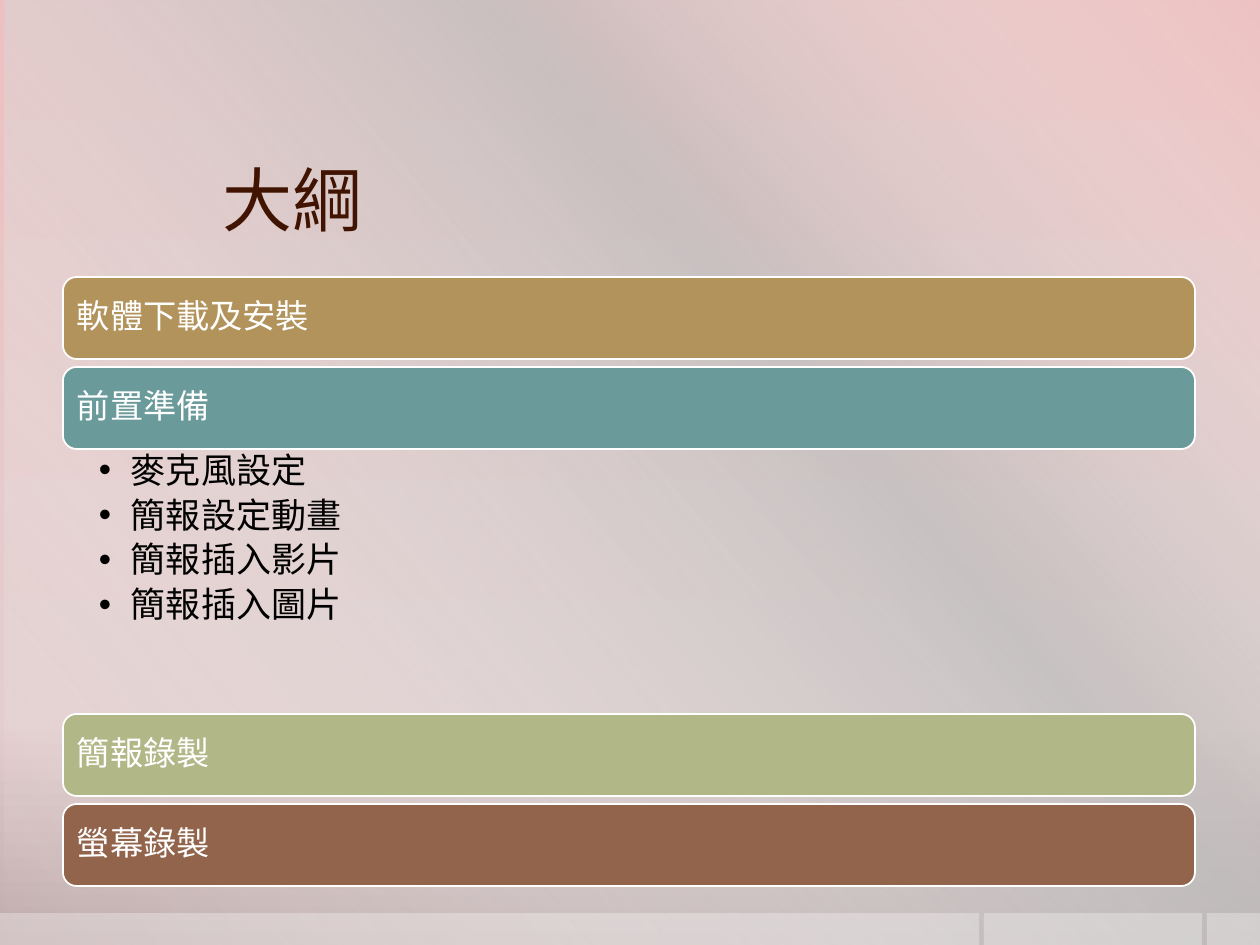
from dataclasses import dataclass
from typing import Any, NamedTuple

from pptx import Presentation
from pptx.dml.color import RGBColor
from pptx.enum.shapes import MSO_SHAPE
from pptx.enum.text import MSO_ANCHOR, PP_ALIGN
from pptx.oxml.ns import qn
from pptx.util import Emu, Pt
from lxml.etree import SubElement


class Stop(NamedTuple):
    percent: int
    color: str
    opacity: int = 100


class Topic(NamedTuple):
    label: str
    color: str
    details: tuple[str, ...] = ()


@dataclass(frozen=True)
class Theme:
    font: str = "Noto Sans CJK SC"
    title_color: str = "411401"
    light: str = "FFFFFF"
    dark: str = "000000"
    title_size: int = 40
    topic_size: int = 19
    detail_size: int = 20
    detail_gap: int = 4
    backdrop: tuple[Stop, ...] = (
        Stop(0, "EDC1C1"), Stop(76, "E3CDCD"), Stop(100, "BFABAB"))
    sheen: tuple[Stop, ...] = (
        Stop(0, "FFFFFF", 0), Stop(34, "BFBFBF", 61),
        Stop(38, "BFBFBF", 76), Stop(100, "FFFFFF", 0))


THEME = Theme()
SLIDE_WIDTH, SLIDE_HEIGHT = 1260, 945
BAR_LEFT, BAR_WIDTH, BAR_HEIGHT, BAR_GAP = 63, 1132, 82, 8
TOPICS_TOP, DETAILS_HEIGHT = 277, 265
STRIP_TOP, STRIP_GAP, STRIP_OPACITY = 913, 5, 30
STRIP_WIDTHS = (979, 218, 53)
BULLET_INDENT = 32

TOPICS = (
    Topic("軟體下載及安裝", "B2935C"),
    Topic("前置準備", "6A9A9A",
          ("麥克風設定", "簡報設定動畫", "簡報插入影片", "簡報插入圖片")),
    Topic("簡報錄製", "B2B787"),
    Topic("螢幕錄製", "91644B"),
)


def px(length: int) -> Emu:
    return Emu(round(length * 914400 / 126))


def apply(target: Any, values: dict[str, Any]) -> None:
    for attribute, value in values.items():
        setattr(target, attribute, value)


def set_opacity(color: Any, percent: int) -> None:
    SubElement(color, qn("a:alpha"), val=str(percent * 1000))


def fill_gradient(fill: Any, owner: Any, stops: tuple[Stop, ...], angle: int) -> None:
    fill.gradient()
    gradient = owner.xpath(".//a:gradFill")[0]
    stop_list = gradient.find(qn("a:gsLst"))
    for preset in list(stop_list):
        stop_list.remove(preset)
    for stop in stops:
        mark = SubElement(stop_list, qn("a:gs"), pos=str(stop.percent * 1000))
        color = SubElement(mark, qn("a:srgbClr"), val=stop.color)
        set_opacity(color, stop.opacity)
    gradient.find(qn("a:lin")).set("ang", str(angle * 60000))


def format_frame(frame: Any, anchor: Any, left: int, top: int, right: int, bottom: int) -> None:
    apply(frame, {
        "word_wrap": True, "vertical_anchor": anchor,
        "margin_left": px(left), "margin_top": px(top),
        "margin_right": px(right), "margin_bottom": px(bottom),
    })


def write(paragraph: Any, words: str, size: int, color: str, spacing: float = 0.9) -> None:
    run = paragraph.add_run()
    run.text = words
    apply(paragraph, {"alignment": PP_ALIGN.LEFT, "line_spacing": spacing})
    apply(run.font, {"size": Pt(size), "name": THEME.font, "bold": False})
    run.font.color.rgb = RGBColor.from_string(color)
    SubElement(run.font._element, qn("a:ea"), typeface=THEME.font)


def add_block(slide: Any, preset: Any, left: int, top: int, width: int, height: int) -> Any:
    block = slide.shapes.add_shape(preset, px(left), px(top), px(width), px(height))
    block.shadow.inherit = False
    block.line.fill.background()
    return block


def draw_backdrop(slide: Any) -> None:
    fill_gradient(slide.background.fill, slide.element, THEME.backdrop, 90)
    sheen = add_block(slide, MSO_SHAPE.RECTANGLE, 5, 0, SLIDE_WIDTH, SLIDE_HEIGHT)
    fill_gradient(sheen.fill, sheen.element, THEME.sheen, 140)
    left = 0
    for width in STRIP_WIDTHS:
        strip = add_block(slide, MSO_SHAPE.RECTANGLE, left, STRIP_TOP,
                          width, SLIDE_HEIGHT - STRIP_TOP)
        strip.fill.solid()
        strip.fill.fore_color.rgb = RGBColor.from_string(THEME.light)
        set_opacity(strip.element.xpath(".//a:solidFill/a:srgbClr")[0], STRIP_OPACITY)
        left += width + STRIP_GAP


def place_title(slide: Any, words: str) -> None:
    title = slide.shapes.title
    slide.shapes.element.append(title.element)
    apply(title, {"left": px(223), "top": px(136), "width": px(974), "height": px(126)})
    format_frame(title.text_frame, MSO_ANCHOR.MIDDLE, 0, 6, 0, 6)
    write(title.text_frame.paragraphs[0], words, THEME.title_size, THEME.title_color, 1.0)


def draw_topic(slide: Any, topic: Topic, top: int) -> None:
    bar = add_block(slide, MSO_SHAPE.ROUNDED_RECTANGLE, BAR_LEFT, top, BAR_WIDTH, BAR_HEIGHT)
    bar.fill.solid()
    bar.fill.fore_color.rgb = RGBColor.from_string(topic.color)
    bar.line.color.rgb = RGBColor.from_string(THEME.light)
    bar.line.width = Pt(1)
    format_frame(bar.text_frame, MSO_ANCHOR.MIDDLE, 10, 10, 10, 10)
    write(bar.text_frame.paragraphs[0], topic.label, THEME.topic_size, THEME.light)


def draw_details(slide: Any, details: tuple[str, ...], top: int) -> None:
    frame = slide.shapes.add_textbox(
        px(BAR_LEFT), px(top), px(BAR_WIDTH), px(DETAILS_HEIGHT)).text_frame
    format_frame(frame, MSO_ANCHOR.TOP, 36, 4, 20, 4)
    for index, detail in enumerate(details):
        paragraph = frame.add_paragraph() if index else frame.paragraphs[0]
        properties = paragraph._p.get_or_add_pPr()
        properties.set("marL", str(px(BULLET_INDENT)))
        properties.set("indent", str(-px(BULLET_INDENT)))
        SubElement(properties, qn("a:buFont"), typeface="Arial")
        SubElement(properties, qn("a:buChar"), char="•")
        write(paragraph, detail, THEME.detail_size, THEME.dark)
        paragraph.space_after = Pt(THEME.detail_gap)


def main() -> None:
    presentation = Presentation()
    apply(presentation, {"slide_width": px(SLIDE_WIDTH), "slide_height": px(SLIDE_HEIGHT)})
    slide = presentation.slides.add_slide(presentation.slide_layouts[5])
    draw_backdrop(slide)
    place_title(slide, "大綱")
    top = TOPICS_TOP
    for topic in TOPICS:
        draw_topic(slide, topic, top)
        top += BAR_HEIGHT
        if topic.details:
            draw_details(slide, topic.details, top)
            top += DETAILS_HEIGHT
        else:
            top += BAR_GAP
    presentation.save("out.pptx")


if __name__ == "__main__":
    main()
